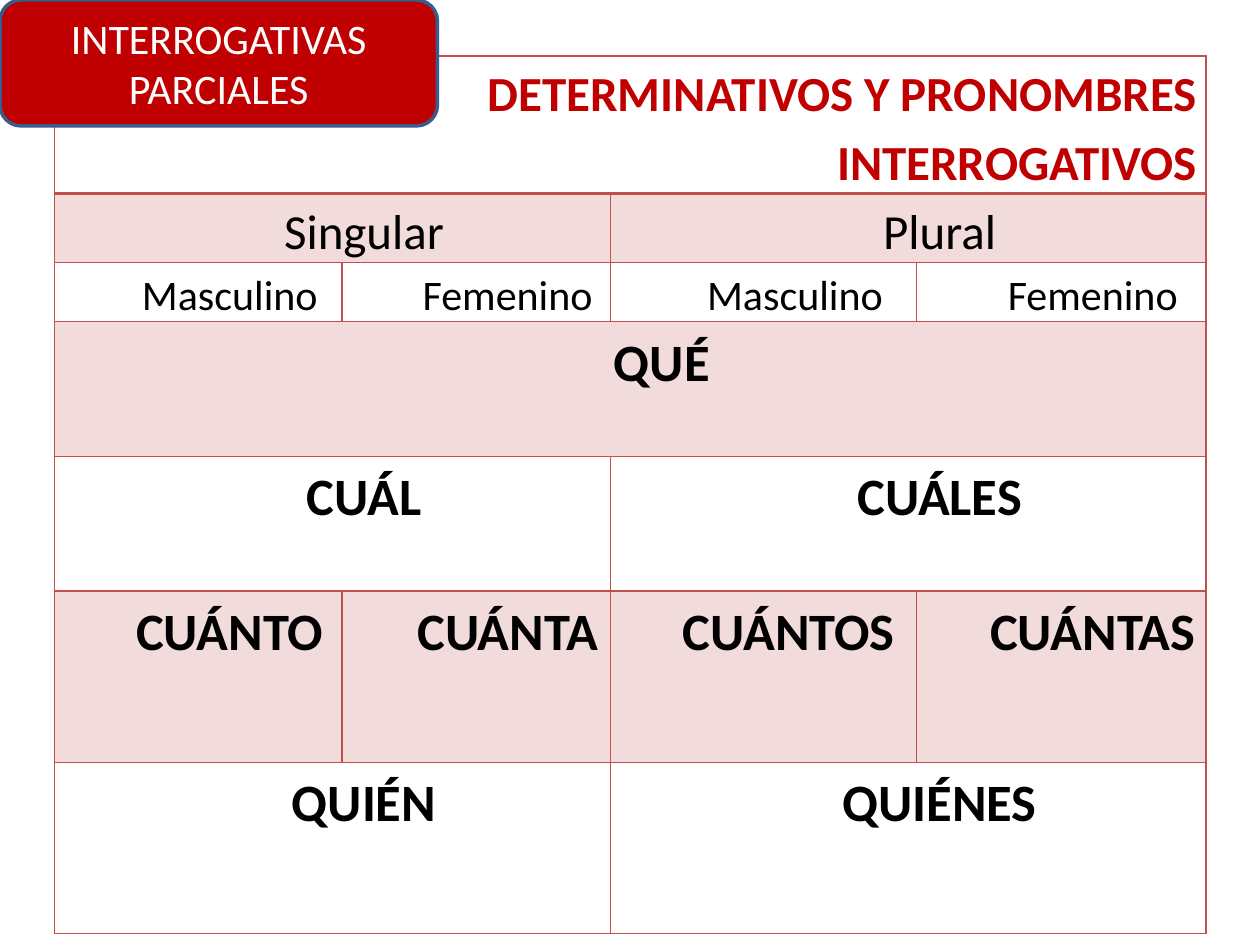
"""Build a slide with a table of Spanish interrogative determiners and pronouns."""
from lxml.etree import SubElement
from pptx import Presentation
from pptx.dml.color import RGBColor
from pptx.enum.shapes import MSO_SHAPE
from pptx.enum.text import MSO_ANCHOR, PP_ALIGN
from pptx.oxml.ns import qn
from pptx.util import Pt


def color(value):
    return RGBColor.from_string(value)


def write(frame, text, size, ink="000000", bold=False, align=PP_ALIGN.CENTER,
          indent=0, line_spacing=None, space_after=0):
    frame.word_wrap = True
    for index, line in enumerate(text.split("\n")):
        paragraph = frame.add_paragraph() if index else frame.paragraphs[0]
        paragraph.alignment = align
        paragraph.line_spacing = line_spacing
        paragraph.space_after = Pt(space_after)
        if indent:
            properties = paragraph._p.get_or_add_pPr()
            properties.set("marL", str(Pt(indent)))
            properties.set("indent", "0")
        run = paragraph.add_run()
        run.text = line
        run.font.name = "Calibri"
        run.font.size = Pt(size)
        run.font.bold = bold
        run.font.color.rgb = color(ink)


RED = "C00000"
ROSE = "C0504D"
COLUMN_WIDTHS = [164.2, 153.4, 175, 165.4]
ROWS = [
    (77, 28, True, ["DETERMINATIVOS Y PRONOMBRES\nINTERROGATIVOS"]),
    (38.9, 28, False, ["Singular", "Plural"]),
    (33.1, 24, False, ["Masculino", "Femenino", "Masculino", "Femenino"]),
    (77, 30, True, ["QUÉ"]),
    (77, 30, True, ["CUÁL", "CUÁLES"]),
    (97.9, 30, True, ["CUÁNTO", "CUÁNTA", "CUÁNTOS", "CUÁNTAS"]),
    (97.9, 30, True, ["QUIÉN", "QUIÉNES"]),
]
ALIGNMENTS = {ROWS[0][3][0]: PP_ALIGN.RIGHT, "CUÁNTOS": PP_ALIGN.LEFT}

presentation = Presentation()
presentation.slide_width = Pt(720)
presentation.slide_height = Pt(540)
slide = presentation.slides.add_slide(presentation.slide_layouts[6])

table = slide.shapes.add_table(
    len(ROWS), len(COLUMN_WIDTHS), Pt(31.2), Pt(32),
    Pt(sum(COLUMN_WIDTHS)), Pt(sum(row[0] for row in ROWS))).table
table.first_row = False
table.horz_banding = False
for column, width in zip(table.columns, COLUMN_WIDTHS):
    column.width = Pt(width)

for row_index, (height, size, bold, texts) in enumerate(ROWS):
    table.rows[row_index].height = Pt(height)
    for column_index in range(len(COLUMN_WIDTHS)):
        cell = table.cell(row_index, column_index)
        cell.margin_left = cell.margin_right = Pt(5.4)
        cell.margin_top = cell.margin_bottom = 0
        properties = cell._tc.get_or_add_tcPr()
        for side in "LRTB":
            heavy = (row_index, side) in [(0, "B"), (1, "T")]
            border = SubElement(properties, qn(f"a:ln{side}"), w=str(Pt(2 if heavy else 1)))
            fill = SubElement(border, qn("a:solidFill"))
            SubElement(fill, qn("a:srgbClr"), val=ROSE)
        if row_index % 2:
            cell.fill.solid()
            cell.fill.fore_color.rgb = color(ROSE)
            SubElement(properties.find(qn("a:solidFill"))[0], qn("a:alpha"), val="20000")
        else:
            cell.fill.background()

    span = len(COLUMN_WIDTHS) // len(texts)
    for index, text in enumerate(texts):
        cell = table.cell(row_index, index * span)
        if span > 1:
            cell.merge(table.cell(row_index, (index + 1) * span - 1))
        is_last = row_index > 0 and index == len(texts) - 1
        write(cell.text_frame, text, size, ink="000000" if row_index else RED, bold=bold,
              align=ALIGNMENTS.get(text, PP_ALIGN.CENTER), indent=36,
              line_spacing=1.15, space_after=10 if is_last else 0)

badge = slide.shapes.add_shape(MSO_SHAPE.ROUNDED_RECTANGLE, 0, 0, Pt(250), Pt(72))
badge.shadow.inherit = False
badge.fill.solid()
badge.fill.fore_color.rgb = color(RED)
badge.line.color.rgb = color("385D8A")
badge.line.width = Pt(2)
badge.text_frame.vertical_anchor = MSO_ANCHOR.MIDDLE
write(badge.text_frame, "INTERROGATIVAS\nPARCIALES", 24, ink="FFFFFF")

presentation.save("out.pptx")
